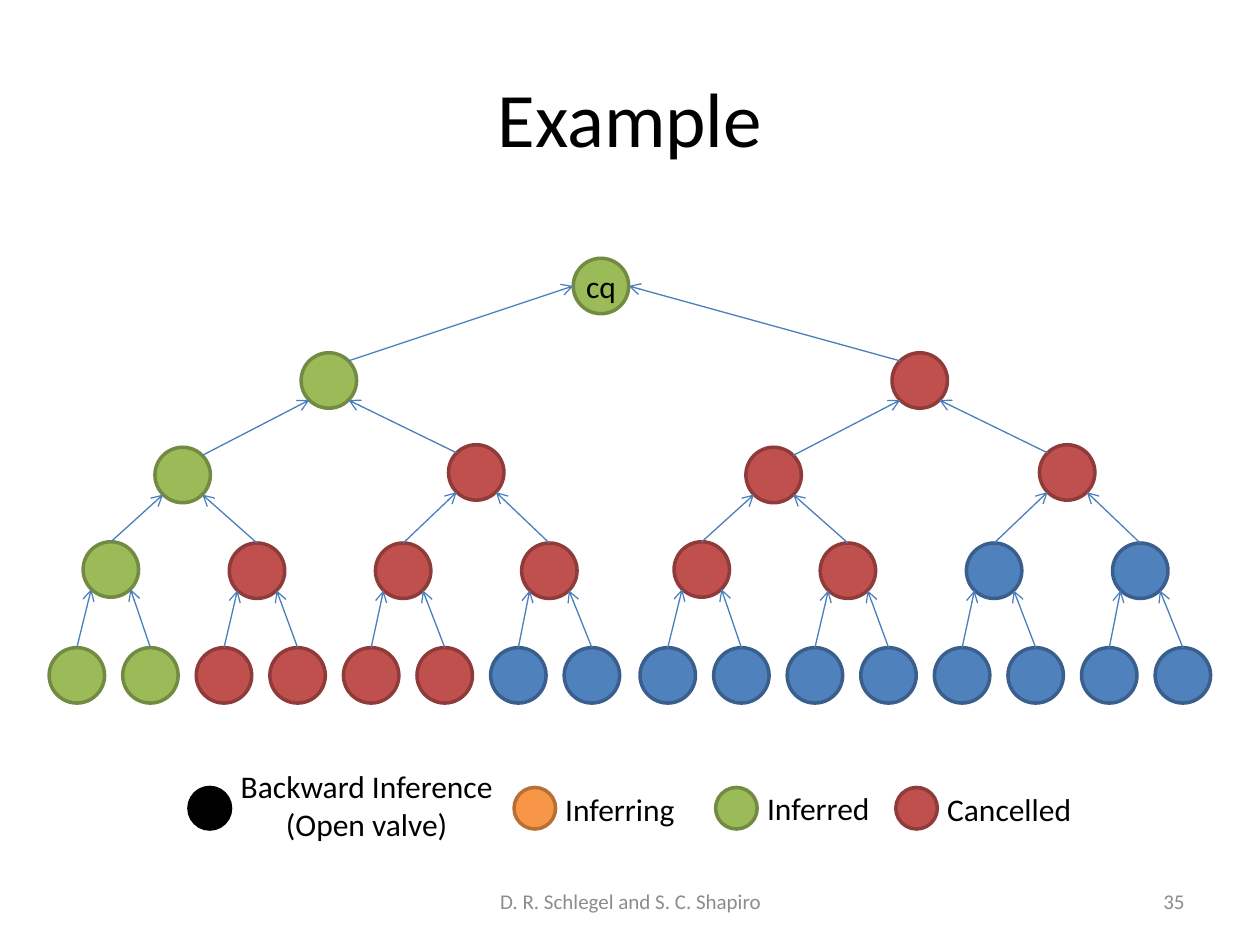
from lxml import etree
from pptx import Presentation
from pptx.dml.color import RGBColor
from pptx.enum import shapes, text
from pptx.oxml.ns import qn
from pptx.util import Inches, Pt

COLORS = {
    "text": "000000", "footer": "8C8C8C", "arrow": "4B7EBC",
    "open": "000000", "open_edge": "000000",
    "inferring": "F79646", "inferring_edge": "B76F34",
    "inferred": "9BBB59", "inferred_edge": "738A42",
    "cancelled": "C0504D", "cancelled_edge": "8E3B39",
    "idle": "4F81BD", "idle_edge": "3A5F8C",
}
NODE = 0.44
LEGEND_DOT = 0.33
# Node levels of one half of the tree: (first left, pitch, tops)
LEVELS = [
    (2.0, 0, [0.75]),
    (0.84, 2.33, [1.5, 1.48]),
    (0.27, 1.16, [2.25, 2.26, 2.26, 2.26]),
    (0, 0.584, [3.09] * 8),
]
LEFT_STATES = [
    ["inferred"],
    ["inferred", "cancelled"],
    ["inferred"] + ["cancelled"] * 3,
    ["inferred"] * 2 + ["cancelled"] * 4 + ["idle"] * 2,
]
RIGHT_STATES = [
    ["cancelled"],
    ["cancelled"] * 2,
    ["cancelled"] * 2 + ["idle"] * 2,
    ["idle"] * 8,
]
# Dot left, label left, label top, label width, label height, state, lines
LEGEND = [
    (0, 0.3, 0, 2.22, 0.71, "open", ["Backward Inference", "(Open valve)"]),
    (2.58, 2.88, 0.18, 1.08, 0.4, "inferring", ["Inferring"]),
    (4.18, 4.48, 0.17, 1.03, 0.4, "inferred", ["Inferred"]),
    (5.61, 5.91, 0.18, 1.2, 0.4, "cancelled", ["Cancelled"]),
]


def rgb(name):
    return RGBColor.from_string(COLORS[name])


def add_label(slide, box, lines, size, align, color="text", wrap=True,
              anchor=text.MSO_ANCHOR.MIDDLE):
    label = slide.shapes.add_textbox(*map(Inches, box))
    frame = label.text_frame
    frame.word_wrap = wrap
    frame.vertical_anchor = anchor
    frame.text = "\n".join(lines)
    for paragraph in frame.paragraphs:
        paragraph.alignment = align
        paragraph.font.name = "Calibri"
        paragraph.font.size = Pt(size)
        paragraph.font.color.rgb = rgb(color)


def add_circle(slide, left, top, diameter, state):
    circle = slide.shapes.add_shape(
        shapes.MSO_SHAPE.OVAL, *map(Inches, (left, top, diameter, diameter)))
    circle.shadow.inherit = False
    circle.fill.solid()
    circle.fill.fore_color.rgb = rgb(state)
    circle.line.color.rgb = rgb(state + "_edge")
    circle.line.width = Pt(2)


def rim(node, dx, dy):
    """Point on a node's rim in the direction (dx, dy), each -1, 0 or 1."""
    reach = NODE / 2 * (0.707 if dx and dy else 1)
    return node[0] + NODE / 2 + dx * reach, node[1] + NODE / 2 + dy * reach


def add_arrow(slide, start, end):
    arrow = slide.shapes.add_connector(
        shapes.MSO_CONNECTOR.STRAIGHT, *map(Inches, start + end))
    arrow.line.color.rgb = rgb("arrow")
    arrow.line.width = Pt(0.75)
    etree.SubElement(arrow.line._get_or_add_ln(), qn("a:tailEnd"), type="arrow")
    etree.SubElement(arrow._element.spPr, qn("a:effectLst"))


def add_half_tree(slide, left, top, states):
    """Draw a binary tree of four levels and return the place of its top node."""
    levels = [
        [(left + first + i * pitch, top + y) for i, y in enumerate(tops)]
        for first, pitch, tops in LEVELS
    ]
    for nodes, node_states in zip(levels, states):
        for node, state in zip(nodes, node_states):
            add_circle(slide, *node, NODE, state)
    for depth, (parents, children) in enumerate(zip(levels, levels[1:])):
        for i, child in enumerate(children):
            side = 1 if i % 2 else -1
            start = rim(child, -side if depth == 0 else 0, -1)
            add_arrow(slide, start, rim(parents[i // 2], side, 1))
    return levels[0][0]


def add_tree(slide, left, top):
    root = (left + 4.16, top)
    add_circle(slide, *root, NODE, "inferred")
    halves = [(0, LEFT_STATES, -1), (4.69, RIGHT_STATES, 1)]
    for offset, states, side in halves:
        branch = add_half_tree(slide, left + offset, top, states)
        add_arrow(slide, rim(branch, -side, -1), rim(root, side, 0))
    add_label(slide, (root[0], top + 0.02, NODE, 0.4), ["cq"], 18,
              text.PP_ALIGN.CENTER, wrap=False, anchor=text.MSO_ANCHOR.TOP)


def add_legend(slide, left, top):
    for dot_x, label_x, label_y, width, height, state, lines in LEGEND:
        add_circle(slide, left + dot_x, top + 0.21, LEGEND_DOT, state)
        add_label(slide, (left + label_x, top + label_y, width, height), lines,
                  18, text.PP_ALIGN.CENTER, wrap=False,
                  anchor=text.MSO_ANCHOR.TOP)


def add_footer(slide, top):
    add_label(slide, (3.42, top, 3.17, 0.4), ["D. R. Schlegel and S. C. Shapiro"],
              12, text.PP_ALIGN.CENTER, "footer")
    add_label(slide, (7.17, top, 2.33, 0.4), ["35"], 12,
              text.PP_ALIGN.RIGHT, "footer")


def main():
    deck = Presentation()
    deck.slide_width, deck.slide_height = Inches(10), Inches(7.5)
    slide = deck.slides.add_slide(deck.slide_layouts[6])
    add_label(slide, (0.5, 0.3, 9, 1.25), ["Example"], 44, text.PP_ALIGN.CENTER)
    add_tree(slide, 0.39, 2.05)
    add_legend(slide, 1.5, 6.04)
    add_footer(slide, 6.95)
    deck.save("out.pptx")


if __name__ == "__main__":
    main()
